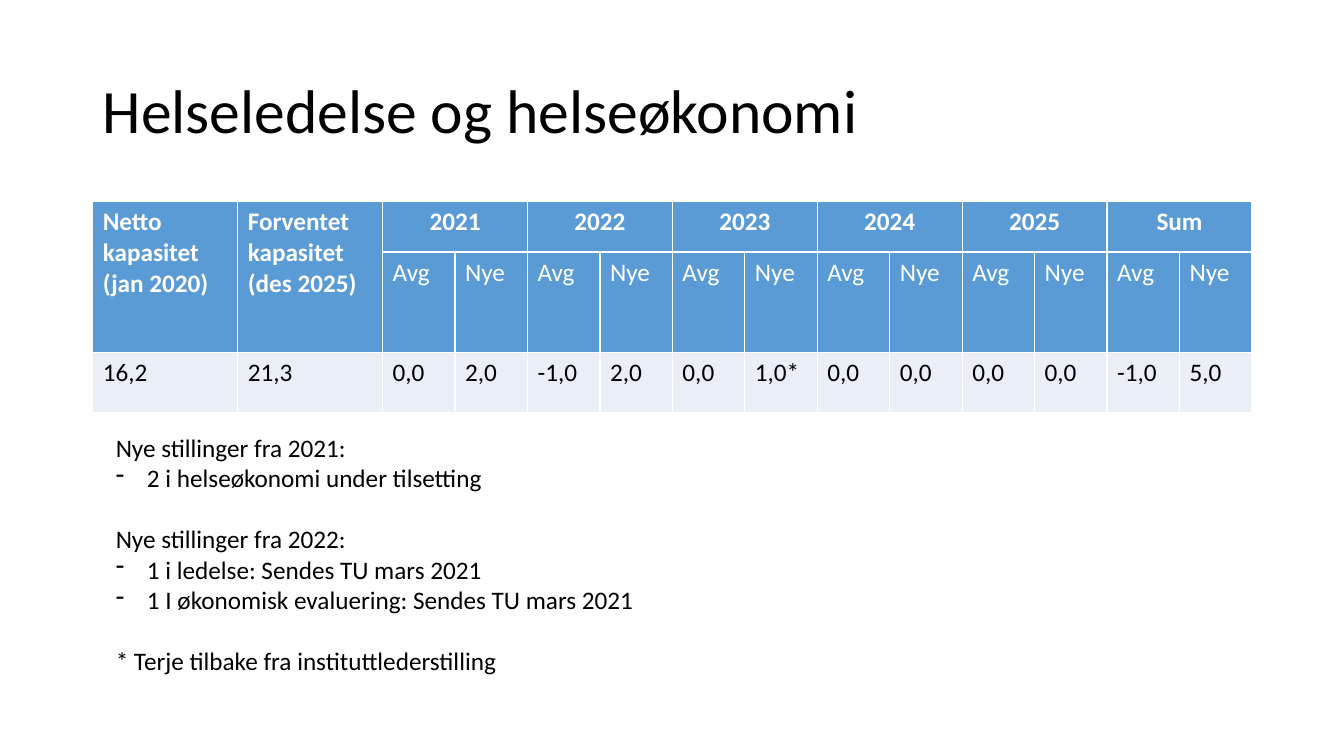
from pptx import Presentation
from pptx.dml.color import RGBColor
from pptx.enum.text import MSO_ANCHOR, PP_ALIGN
from pptx.util import Inches, Pt
from lxml.etree import SubElement
from pptx.oxml.ns import qn

BLACK = RGBColor(0x00, 0x00, 0x00)
WHITE = RGBColor(0xFF, 0xFF, 0xFF)
BLUE = RGBColor(0x5B, 0x9B, 0xD5)
PALE = RGBColor(0xEA, 0xEF, 0xF7)

SLIDE_W, SLIDE_H = 13.33, 7.5
TITLE_BOX = (0.92, 0.4, 11.5, 1.45)
TABLE_BOX = (0.92, 2, 11.5, 1.59)
NOTES_BOX = (1.05, 4.24, 5.4, 2.83)

CAPACITY = ["Netto kapasitet (jan 2020)", "Forventet kapasitet (des 2025)"]
GROUPS = ["2021", "2022", "2023", "2024", "2025", "Sum"]
SUBHEADS = ["Avg", "Nye"]
VALUES = ["16,2", "21,3", "0,0", "2,0", "-1,0", "2,0", "0,0", "1,0*",
          "0,0", "0,0", "0,0", "0,0", "-1,0", "5,0"]
ROW_HEIGHTS = [0.5, 0.5, 0.59]
GRID_UNITS = 16  # a capacity column takes two units, the others one

# Each block of notes: plain line, then its dashed items
NOTES = [
    ("Nye stillinger fra 2021:", ["2 i helseøkonomi under tilsetting"]),
    ("Nye stillinger fra 2022:", ["1 i ledelse: Sendes TU mars 2021",
                                  "1 I økonomisk evaluering: Sendes TU mars 2021"]),
    ("* Terje tilbake fra instituttlederstilling", []),
]


def write(p, text, color=BLACK, **formats):
    r = p.add_run()
    r.text = text
    r.font.color.rgb = color
    for name, value in {"name": "Calibri", "size": Pt(18), **formats}.items():
        setattr(r.font, name, value)


def add_text(slide, box, wrap):
    tf = slide.shapes.add_textbox(*map(Inches, box)).text_frame
    tf.word_wrap = wrap
    return tf


def add_title(slide, box):
    tf = add_text(slide, box, True)
    tf.vertical_anchor = MSO_ANCHOR.MIDDLE
    p = tf.paragraphs[0]
    p.line_spacing = 0.9
    write(p, "Helseledelse og helseøkonomi", size=Pt(44))


def add_capacity_table(slide, box):
    first = len(CAPACITY)
    table = slide.shapes.add_table(len(ROW_HEIGHTS), len(VALUES),
                                   *map(Inches, box)).table
    unit = box[2] / GRID_UNITS
    for i, col in enumerate(table.columns):
        col.width = Inches(unit * (2 if i < first else 1))
    for row, height in zip(table.rows, ROW_HEIGHTS):
        row.height = Inches(height)

    def fill_cell(row, col, text, color=WHITE, bold=False):
        p = table.cell(row, col).text_frame.paragraphs[0]
        write(p, text, color, bold=bold)
        return p

    # Background: blue header rows, pale value row
    for r, row in enumerate(table.rows):
        for cell in row.cells:
            cell.fill.solid()
            cell.fill.fore_color.rgb = BLUE if r < 2 else PALE

    # Headers
    for c, text in enumerate(CAPACITY):
        table.cell(0, c).merge(table.cell(1, c))
        fill_cell(0, c, text, bold=True)
    for g, text in enumerate(GROUPS):
        c = first + g * len(SUBHEADS)
        table.cell(0, c).merge(table.cell(0, c + 1))
        fill_cell(0, c, text, bold=True).alignment = PP_ALIGN.CENTER
        for k, subhead in enumerate(SUBHEADS):
            fill_cell(1, c + k, subhead)

    # Values
    for c, text in enumerate(VALUES):
        fill_cell(2, c, text, BLACK)


def add_dash(p):
    pPr = p._p.get_or_add_pPr()
    pPr.set("marL", str(Inches(0.31)))
    pPr.set("indent", str(-Inches(0.31)))
    SubElement(pPr, qn("a:buFontTx"))
    SubElement(pPr, qn("a:buChar"), char="-")


def add_notes(slide, box):
    tf = add_text(slide, box, False)
    for i, (heading, items) in enumerate(NOTES):
        p = tf.add_paragraph() if i else tf.paragraphs[0]
        if i:
            p.space_before = Pt(22)
        write(p, heading)
        for item in items:
            p = tf.add_paragraph()
            add_dash(p)
            write(p, item)


def main():
    prs = Presentation()
    prs.slide_width, prs.slide_height = Inches(SLIDE_W), Inches(SLIDE_H)
    slide = prs.slides.add_slide(prs.slide_layouts[6])
    add_title(slide, TITLE_BOX)
    add_capacity_table(slide, TABLE_BOX)
    add_notes(slide, NOTES_BOX)
    prs.save("out.pptx")


if __name__ == "__main__":
    main()
